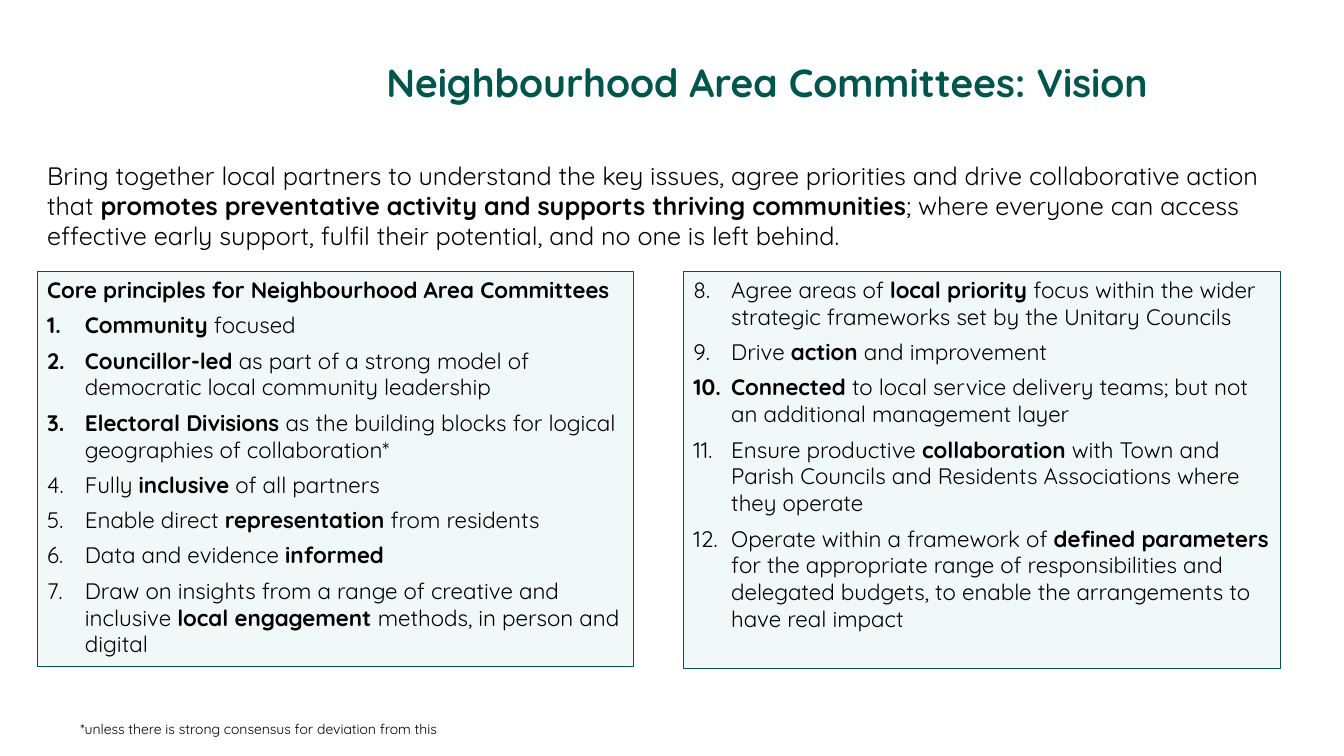
from pptx import Presentation
from pptx import util as u
from pptx.dml import color
from pptx.enum import shapes, text
from lxml import etree

GREEN, PALE, BLACK = "00554D", "F0F9F8", "000000"
NAMESPACE = "{http://schemas.openxmlformats.org/drawingml/2006/main}"
VISION = (
    "Bring together local partners to understand the key issues, agree priorities and drive "
    "collaborative action that **promotes preventative activity and supports thriving "
    "communities**; where everyone can access effective early support, fulfil their potential, "
    "and no one is left behind."
)
HEADING = "**Core principles for Neighbourhood Area Committees**"
PRINCIPLES = [
    "**Community** focused",
    "**Councillor-led** as part of a strong model of democratic local community leadership",
    "**Electoral Divisions **as the building blocks for logical geographies of collaboration*",
    "Fully **inclusive** of all partners",
    "Enable direct **representation** from residents",
    "Data and evidence **informed**",
    "Draw on insights from a range of creative and inclusive **local engagement **methods, "
    "in person and digital",
    "Agree areas of **local priority **focus within the wider strategic frameworks set by "
    "the Unitary Councils",
    "Drive **action** and improvement",
    "**Connected** to local service delivery teams; but not an additional management layer",
    "Ensure productive **collaboration** with Town and Parish Councils and Residents "
    "Associations where they operate",
    "Operate within a framework of **defined parameters **for the appropriate range of "
    "responsibilities and delegated budgets, to enable the arrangements to have real impact",
]
LEFT_COUNT = 7


def rgb(value):
    return color.RGBColor.from_string(value)


class Deck:
    """Holds the style and the current slide, and adds each kind of element."""

    def __init__(self, slide, font="Quicksand"):
        self.slide = slide
        self.font = font

    def fill_paragraph(self, paragraph, content, size, fill=BLACK, start=None):
        if start:
            properties = paragraph._p.get_or_add_pPr()
            properties.set("marL", str(u.Pt(27)))
            properties.set("indent", str(u.Pt(-27)))
            bullet = etree.SubElement(properties, NAMESPACE + "buAutoNum", type="arabicPeriod")
            if start > 1:
                bullet.set("startAt", str(start))
        paragraph.font.name = self.font
        paragraph.font.size = u.Pt(size)
        paragraph.font.color.rgb = rgb(fill)
        for index, part in enumerate(content.split("**")):
            if part:
                run = paragraph.add_run()
                run.text = part
                run.font.bold = index % 2 == 1

    def frame(self, shape):
        frame = shape.text_frame
        frame.word_wrap = True
        frame.auto_size = text.MSO_AUTO_SIZE.NONE
        frame.vertical_anchor = text.MSO_ANCHOR.TOP
        return frame

    def label(self, left, top, width, height, content, size, fill=BLACK, align=text.PP_ALIGN.LEFT):
        shape = self.slide.shapes.add_textbox(*map(u.Pt, (left, top, width, height)))
        paragraph = self.frame(shape).paragraphs[0]
        paragraph.alignment = align
        self.fill_paragraph(paragraph, content, size, fill)

    def panel(self, left, top, width, height, principles, start, heading=None):
        shape = self.slide.shapes.add_shape(
            shapes.MSO_SHAPE.RECTANGLE, *map(u.Pt, (left, top, width, height)))
        shape.shadow.inherit = False
        shape.fill.solid()
        shape.fill.fore_color.rgb = rgb(PALE)
        shape.line.color.rgb = rgb(GREEN)
        shape.line.width = u.Pt(0.75)
        frame = self.frame(shape)
        items = [(heading, None)] if heading else []
        items += [(principle, start) for principle in principles]
        for index, (content, number) in enumerate(items):
            paragraph = frame.add_paragraph() if index else frame.paragraphs[0]
            paragraph.alignment = text.PP_ALIGN.LEFT
            paragraph.space_after = u.Pt(6)
            self.fill_paragraph(paragraph, content, 16, start=number)


def main():
    presentation = Presentation()
    presentation.slide_width, presentation.slide_height = u.Pt(960), u.Pt(540)
    deck = Deck(presentation.slides.add_slide(presentation.slide_layouts[6]))
    deck.label(239, 38.2, 617.8, 41, "**Neighbourhood Area Committees: Vision**", 28, GREEN,
               text.PP_ALIGN.CENTER)
    deck.label(26.6, 110.9, 881.3, 72.7, VISION, 18)
    deck.panel(26.6, 193.7, 426.2, 282.2, PRINCIPLES[:LEFT_COUNT], 1, HEADING)
    deck.panel(488.2, 193.7, 426.2, 283.7, PRINCIPLES[LEFT_COUNT:], LEFT_COUNT + 1)
    deck.label(50.4, 511.2, 523.4, 19.4,
               "*unless there is strong consensus for deviation from this", 10)
    presentation.save("out.pptx")


if __name__ == "__main__":
    main()
